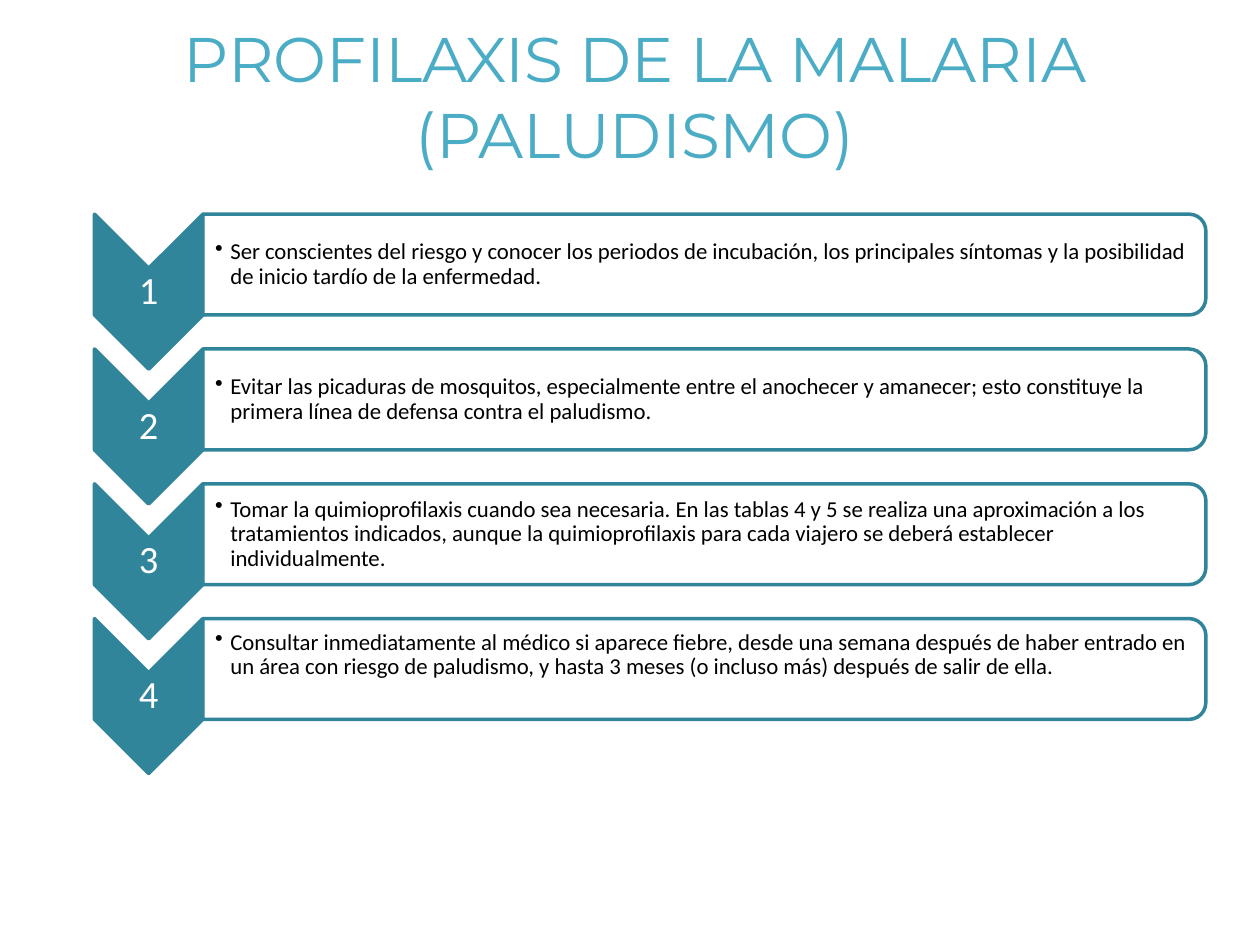
from lxml.etree import SubElement
from pptx import Presentation
from pptx.dml.color import RGBColor
from pptx.enum.shapes import MSO_SHAPE as SHAPE
from pptx.enum.text import MSO_ANCHOR as ANCHOR, PP_ALIGN as ALIGN
from pptx.oxml.ns import qn
from pptx.util import Inches, Pt

COLORS = {"title": "4BACC6", "teal": "31859B", "white": "FFFFFF", "black": "000000"}
TITLE = "PROFILAXIS DE LA MALARIA (PALUDISMO)"
STEPS = [
    "Ser conscientes del riesgo y conocer los periodos de incubación, los principales "
    "síntomas y la posibilidad de inicio tardío de la enfermedad.",
    "Evitar las picaduras de mosquitos, especialmente entre el anochecer y amanecer; "
    "esto constituye la primera línea de defensa contra el paludismo.",
    "Tomar la quimioprofilaxis cuando sea necesaria. En las tablas 4 y 5 se realiza una "
    "aproximación a los tratamientos indicados, aunque la quimioprofilaxis para cada "
    "viajero se deberá establecer individualmente.",
    "Consultar inmediatamente al médico si aparece fiebre, desde una semana después de "
    "haber entrado en un área con riesgo de paludismo, y hasta 3 meses (o incluso más) "
    "después de salir de ella.",
]
FIRST_TOP, PITCH = 1.7, 1.07


def rgb(name):
    return RGBColor.from_string(COLORS[name])


def set_text(tf, text, size, color, font="Calibri", align=ALIGN.LEFT,
             insets=None, spacing=None, bullet=False):
    tf.word_wrap = True
    tf.vertical_anchor = ANCHOR.MIDDLE
    if insets:
        (tf.margin_left, tf.margin_top,
         tf.margin_right, tf.margin_bottom) = map(Inches, insets)
    p = tf.paragraphs[0]
    p.alignment = align
    if spacing:
        p.line_spacing = spacing
    if bullet:
        pPr = p._p.get_or_add_pPr()
        pPr.set("marL", str(Inches(0.12)))
        pPr.set("indent", str(Inches(-0.12)))
        SubElement(pPr, qn("a:buChar"), char="•")
    r = p.add_run()
    r.text = text
    r.font.size = Pt(size)
    r.font.name = font
    r.font.color.rgb = rgb(color)


def add_text(s, box, text, **fmt):
    set_text(s.shapes.add_textbox(*map(Inches, box)).text_frame, text, **fmt)


def add_turned_shape(s, kind, box, fill, alpha=None):
    """Add a shape turned by 90 degrees that covers the given box."""
    left, top, w, h = box
    sp = s.shapes.add_shape(kind, Inches(left + (w - h) / 2),
                            Inches(top + (h - w) / 2), Inches(h), Inches(w))
    sp.rotation = 90
    sp.shadow.inherit = False
    sp.fill.solid()
    sp.fill.fore_color.rgb = rgb(fill)
    if alpha:
        color = sp._element.spPr.find(".//" + qn("a:srgbClr"))
        SubElement(color, qn("a:alpha"), val=str(alpha * 1000))
    sp.line.color.rgb = rgb("teal")
    sp.line.width = Pt(2)


def add_step(s, number, text, top, lift=0):
    # Numbered chevron
    add_turned_shape(s, SHAPE.CHEVRON, (0.75, top, 0.86, 1.23), "teal")
    add_text(s, (0.75, top + 0.43, 0.86, 0.37), str(number), size=22, color="white",
             align=ALIGN.CENTER, insets=(0.02,) * 4, spacing=0.9)
    # Panel with its advice
    add_turned_shape(s, SHAPE.ROUND_2_SAME_RECTANGLE, (1.61, top, 7.96, 0.8),
                     "white", alpha=90)
    add_text(s, (1.61, top + 0.04, 7.92, 0.72), text, size=13, color="black",
             insets=(0.1, 0.01, 0.01, 0.01 + lift), spacing=0.9, bullet=True)


def main():
    prs = Presentation()
    prs.slide_width, prs.slide_height = Inches(10), Inches(7.5)
    s = prs.slides.add_slide(prs.slide_layouts[5])

    # Title
    title = s.shapes.title
    title.left, title.top, title.width, title.height = map(Inches, (0.04, 0.13, 10, 1.25))
    set_text(title.text_frame, TITLE, size=36, color="title", font="Montserrat",
             align=ALIGN.CENTER)

    # Steps; the last text sits higher in its panel
    for i, text in enumerate(STEPS):
        lift = 0.22 if i == len(STEPS) - 1 else 0
        add_step(s, i + 1, text, FIRST_TOP + i * PITCH, lift)

    prs.save("out.pptx")


if __name__ == "__main__":
    main()
